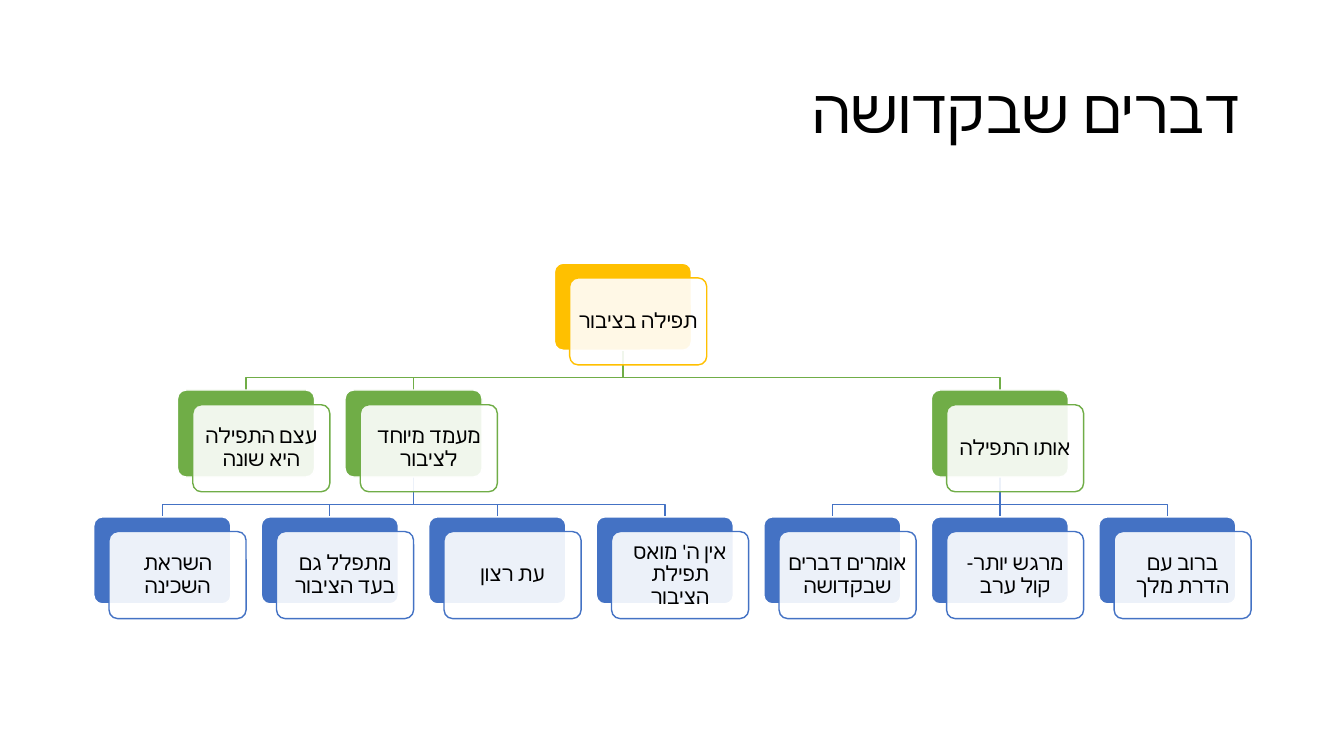
"""Build a slide with a three-level hierarchy of ideas on public prayer."""
from dataclasses import dataclass

from lxml.etree import SubElement
from pptx import Presentation
from pptx.dml.color import RGBColor
from pptx.enum.shapes import MSO_CONNECTOR as Connector, MSO_SHAPE as Shape
from pptx.enum.text import MSO_ANCHOR as Anchor, MSO_AUTO_SIZE as AutoSize, PP_ALIGN as Align
from pptx.oxml.ns import qn
from pptx.util import Pt


@dataclass(frozen=True)
class Theme:
    """Colours, font and type sizes of the slide."""
    text: str = "000000"
    card: str = "FFFFFF"
    levels: tuple = ("FFC000", "70AD47", "4472C4")
    font: str = "Calibri"
    title_size: float = 44
    card_size: float = 15
    line_width: float = 1
    card_opacity: int = 90


@dataclass(frozen=True)
class Grid:
    """Measures of the hierarchy in points, relative to its box."""
    column_pitch: float = 119.65
    row_pitch: float = 90.6
    width: float = 97.9
    height: float = 62.2
    offset_x: float = 10.9
    offset_y: float = 10.5
    elbow: float = 8.8


@dataclass(frozen=True)
class Node:
    """One idea, its column and the ideas below it."""
    label: str
    column: float
    children: tuple = ()


THEME = Theme()
GRID = Grid()
TREE = Node("תפילה בציבור", 2.75, (
    Node("עצם התפילה היא שונה", 0.5),
    Node("מעמד מיוחד לציבור", 1.5, (
        Node("השראת השכינה", 0),
        Node("מתפלל גם בעד הציבור", 1),
        Node("עת רצון", 2),
        Node("אין ה' מואס תפילת הציבור", 3),
    )),
    Node("אותו התפילה", 5, (
        Node("אומרים דברים שבקדושה", 4),
        Node("מרגש יותר- קול ערב", 5),
        Node("ברוב עם הדרת מלך", 6),
    )),
))


def write_text(shape, text, *, size, align, inset=None):
    """Put right-to-left text into a shape."""
    frame = shape.text_frame
    frame.word_wrap = True
    frame.auto_size = AutoSize.NONE
    frame.vertical_anchor = Anchor.MIDDLE
    if inset is not None:
        frame.margin_left = frame.margin_right = Pt(inset)
        frame.margin_top = frame.margin_bottom = Pt(inset)
    paragraph = frame.paragraphs[0]
    paragraph.alignment = align
    paragraph.line_spacing = 0.9
    paragraph._p.get_or_add_pPr().set("rtl", "1")
    run = paragraph.add_run()
    run.text = text
    run.font.size = Pt(size)
    run.font.name = THEME.font
    run.font.color.rgb = RGBColor.from_string(THEME.text)
    SubElement(run._r.get_or_add_rPr(), qn("a:cs"), typeface=THEME.font)


def set_line(shape, color):
    """Give a shape or connector its line."""
    shape.line.color.rgb = RGBColor.from_string(color)
    shape.line.width = Pt(THEME.line_width)


def add_title(slide, text, left, top, width, height):
    """Place the title placeholder in its box."""
    title = slide.shapes.title
    title.left, title.top, title.width, title.height = map(Pt, (left, top, width, height))
    write_text(title, text, size=THEME.title_size, align=Align.RIGHT)


def add_rounded(slide, left, top, fill, line):
    """Add one rounded rectangle of card size."""
    shape = slide.shapes.add_shape(
        Shape.ROUNDED_RECTANGLE, Pt(left), Pt(top), Pt(GRID.width), Pt(GRID.height))
    shape.adjustments[0] = 0.1
    shape.shadow.inherit = False
    shape.fill.solid()
    shape.fill.fore_color.rgb = RGBColor.from_string(fill)
    set_line(shape, line)
    return shape


def add_card(slide, label, left, top, color):
    """Add a coloured back plate and a translucent card with its label."""
    add_rounded(slide, left, top, color, THEME.card)
    card = add_rounded(slide, left + GRID.offset_x, top + GRID.offset_y, THEME.card, color)
    fill_color = card._element.spPr.find(qn("a:solidFill"))[0]
    SubElement(fill_color, qn("a:alpha"), val=str(THEME.card_opacity * 1000))
    write_text(card, label, size=THEME.card_size, align=Align.CENTER, inset=4.3)


def add_link(slide, start_x, start_y, end_x, end_y, color):
    """Join a parent to a child by a straight or elbowed line."""
    if start_x == end_x:
        link = slide.shapes.add_connector(
            Connector.STRAIGHT, Pt(start_x), Pt(start_y), Pt(end_x), Pt(end_y))
        SubElement(link._element.spPr, qn("a:effectLst"))
    else:
        bend_y = end_y - GRID.elbow
        builder = slide.shapes.build_freeform(Pt(start_x), Pt(start_y))
        builder.add_line_segments(
            [(Pt(start_x), Pt(bend_y)), (Pt(end_x), Pt(bend_y)), (Pt(end_x), Pt(end_y))],
            close=False)
        link = builder.convert_to_shape()
        link.shadow.inherit = False
        link.fill.background()
    set_line(link, color)


def add_links(slide, node, left, top, level=0):
    """Draw all links below a node."""
    center = left + GRID.width / 2
    row_top = top + level * GRID.row_pitch
    for child in node.children:
        add_link(slide, center + node.column * GRID.column_pitch, row_top + GRID.height,
                 center + child.column * GRID.column_pitch, row_top + GRID.row_pitch,
                 THEME.levels[level + 1])
        add_links(slide, child, left, top, level + 1)


def add_cards(slide, node, left, top, level=0):
    """Draw the cards of a node and all below it."""
    add_card(slide, node.label, left + node.column * GRID.column_pitch,
             top + level * GRID.row_pitch, THEME.levels[level])
    for child in node.children:
        add_cards(slide, child, left, top, level + 1)


def add_hierarchy(slide, tree, left, top):
    """Place the whole hierarchy, with links behind cards."""
    add_links(slide, tree, left, top)
    add_cards(slide, tree, left, top)


def main():
    """Build and save the presentation."""
    presentation = Presentation()
    presentation.slide_width, presentation.slide_height = Pt(960), Pt(540)
    slide = presentation.slides.add_slide(presentation.slide_layouts[5])
    add_title(slide, "דברים שבקדושה", 66, 28.8, 828, 104.4)
    add_hierarchy(slide, TREE, 67, 188)
    presentation.save("out.pptx")


if __name__ == "__main__":
    main()
